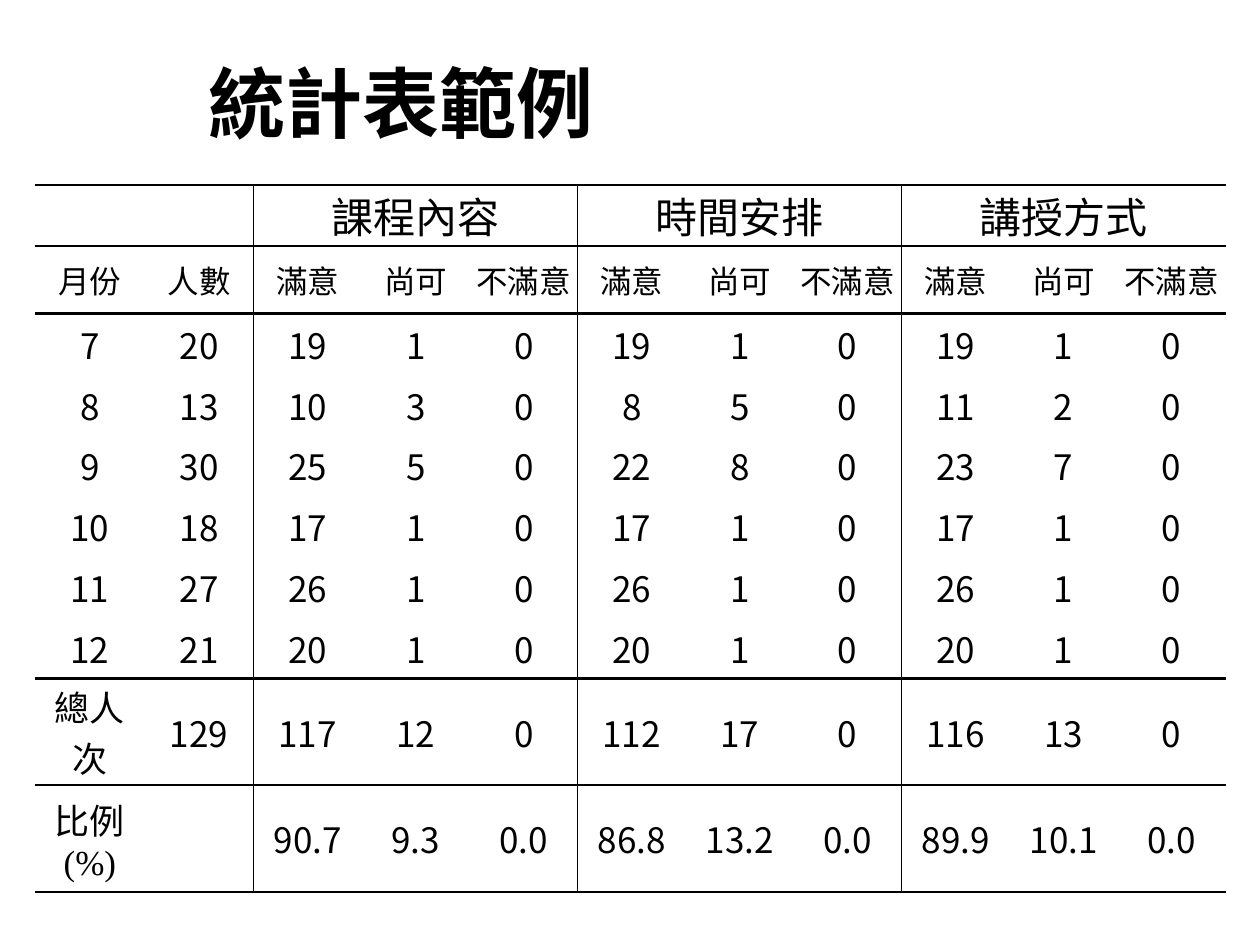
import pptx
import pptx.dml.color
import pptx.enum.text
import pptx.oxml
import pptx.oxml.ns
import pptx.util
from pptx.util import Inches

BLACK = pptx.dml.color.RGBColor(0x00, 0x00, 0x00)
SANS = "Noto Sans CJK SC"
SERIF = "Times New Roman"
NO_STYLE = "{2D5ABB26-0587-4C30-8999-92F81FD0307C}"

TOPICS = ["課程內容", "時間安排", "講授方式"]
RATINGS = ["滿意", "尚可", "不滿意"]
RESULTS = [
    "7 20 19 1 0 19 1 0 19 1 0".split(),
    "8 13 10 3 0 8 5 0 11 2 0".split(),
    "9 30 25 5 0 22 8 0 23 7 0".split(),
    "10 18 17 1 0 17 1 0 17 1 0".split(),
    "11 27 26 1 0 26 1 0 26 1 0".split(),
    "12 21 20 1 0 20 1 0 20 1 0".split(),
]
TOTALS = "總人次 129 117 12 0 112 17 0 116 13 0".split()
SHARES = ["比例(%)", ""] + "90.7 9.3 0.0 86.8 13.2 0.0 89.9 10.1 0.0".split()

LEAD_COLS = 2
GROUP = len(RATINGS)
TOPIC_COLS = range(LEAD_COLS, LEAD_COLS + GROUP * len(TOPICS), GROUP)
TOPIC_ROW = ["", ""] + [t for topic in TOPICS for t in (topic, "", "")]
ROWS = [TOPIC_ROW, ["月份", "人數"] + RATINGS * len(TOPICS), *RESULTS, TOTALS, SHARES]
COL_WIDTHS = [0.87] * LEAD_COLS + [0.86] * GROUP * len(TOPICS)
ROW_HEIGHTS = [0.47, 0.53] + [0.48] * len(RESULTS) + [0.84, 0.84]
HEADER_SIZES = {0: 24, 1: 18}
# Line weight in points, by the row above which the rule runs
ROW_RULES = {0: 1.5, 1: 1, 2: 1.5, 8: 1.5, 9: 1.5, 10: 1.5}
COL_RULES = {c: 1 for c in TOPIC_COLS}


def write_text(tf, text, font, size, bold=False):
    """Put one centred run in tf, with a sans face for the Chinese characters."""
    p = tf.paragraphs[0]
    p.alignment = pptx.enum.text.PP_ALIGN.CENTER
    if not text:
        p.font.size = pptx.util.Pt(size)
        return
    r = p.add_run()
    r.text = text
    values = {"name": font, "size": pptx.util.Pt(size), "bold": bold}
    for name, value in values.items():
        setattr(r.font, name, value)
    r.font.color.rgb = BLACK
    ea = pptx.oxml.parse_xml(f'<a:ea {pptx.oxml.ns.nsdecls("a")} typeface="{SANS}"/>')
    r.font._element.find(pptx.oxml.ns.qn("a:latin")).addnext(ea)


def set_borders(cell, weights):
    """Draw the sides L, R, T, B that have a weight and hide the others."""
    for side, weight in weights.items():
        fill = (f'<a:solidFill><a:srgbClr val="{BLACK}"/></a:solidFill>'
                if weight else "<a:noFill/>")
        cell._tc.get_or_add_tcPr().append(pptx.oxml.parse_xml(
            f'<a:ln{side} {pptx.oxml.ns.nsdecls("a")} '
            f'w="{pptx.util.Pt(weight)}">{fill}</a:ln{side}>'))


def format_cell(cell, row, col, text):
    layout = {
        "margin_left": Inches(0.02), "margin_right": Inches(0.02),
        "margin_top": 0, "margin_bottom": 0,
        "vertical_anchor": pptx.enum.text.MSO_ANCHOR.MIDDLE,
    }
    for name, value in layout.items():
        setattr(cell, name, value)
    is_label = row in HEADER_SIZES or (col == 0 and row >= len(ROWS) - 2)
    write_text(cell.text_frame, text, SERIF if is_label else SANS,
               HEADER_SIZES.get(row, 20))
    right = col + (cell.span_width if cell.is_merge_origin else 1)
    inside_merge = cell.is_spanned
    set_borders(cell, {
        "L": 0 if inside_merge else COL_RULES.get(col, 0),
        "R": COL_RULES.get(right, 0),
        "T": ROW_RULES.get(row, 0),
        "B": ROW_RULES.get(row + 1, 0),
    })
    cell.fill.background()


def add_title(s, left, top, width, height):
    title = s.shapes.title
    title.left, title.top, title.width, title.height = left, top, width, height
    title.text_frame.vertical_anchor = pptx.enum.text.MSO_ANCHOR.MIDDLE
    write_text(title.text_frame, "統計表範例", SANS, 44, bold=True)


def add_survey_table(s, left, top, width, height):
    table = s.shapes.add_table(len(ROWS), len(COL_WIDTHS),
                               left, top, width, height).table
    table.first_row = table.horz_banding = False
    table._tbl.tblPr.find(pptx.oxml.ns.qn("a:tableStyleId")).text = NO_STYLE
    for column, share in zip(table.columns, COL_WIDTHS):
        column.width = int(width * share / sum(COL_WIDTHS))
    for row, share in zip(table.rows, ROW_HEIGHTS):
        row.height = int(height * share / sum(ROW_HEIGHTS))
    for col in TOPIC_COLS:
        table.cell(0, col).merge(table.cell(0, col + GROUP - 1))
    for r, texts in enumerate(ROWS):
        for c, text in enumerate(texts):
            format_cell(table.cell(r, c), r, c, text)


def main():
    prs = pptx.Presentation()
    prs.slide_width, prs.slide_height = Inches(10), Inches(7.5)
    s = prs.slides.add_slide(prs.slide_layouts[5])
    add_title(s, Inches(0.98), Inches(0.38), Inches(4.41), Inches(0.85))
    add_survey_table(s, Inches(0.28), Inches(1.47), Inches(9.45), Inches(5.6))
    prs.save("out.pptx")


if __name__ == "__main__":
    main()
